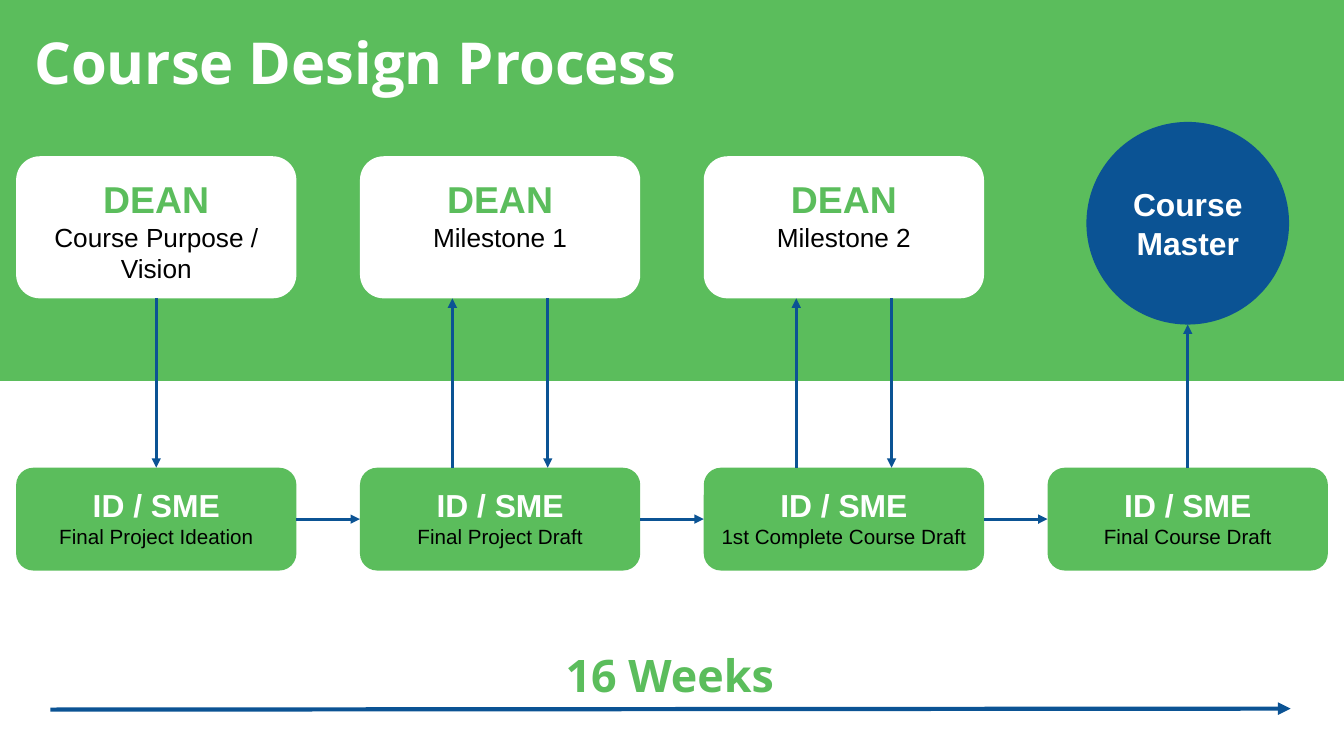
from lxml.etree import SubElement
from pptx import Presentation
from pptx.dml.color import RGBColor
from pptx.enum.shapes import MSO_CONNECTOR, MSO_SHAPE
from pptx.enum.text import MSO_ANCHOR, MSO_AUTO_SIZE, PP_ALIGN
from pptx.oxml.ns import qn
from pptx.util import Inches, Pt

WIDTH, HEIGHT = 13.33, 7.5
GREEN, BLUE, WHITE, BLACK = "5BBD5C", "0B5394", "FFFFFF", "000000"
LEFT, PITCH, BOX_WIDTH = 0.16, 3.41, 2.78
# Each row of the grid: top and height
ROWS = {"dean": (1.55, 1.41), "team": (4.64, 1.02)}
CENTER, UP_LANE, DOWN_LANE = 0.5, 0.33, 0.67


def color(value):
    return RGBColor.from_string(value)


def column_x(column, share=0):
    """Place in a column, with share as a part of the box width."""
    return LEFT + column * PITCH + share * BOX_WIDTH


def row_y(row, share=0):
    top, height = ROWS[row]
    return top + share * height


class ProcessSlide:
    def __init__(self, deck):
        self.page = deck.slides.add_slide(deck.slide_layouts[5])
        self.frame_format = {
            "word_wrap": True,
            "auto_size": MSO_AUTO_SIZE.NONE,
            "margin_left": Inches(0.12),
            "margin_right": Inches(0.12),
            "margin_top": Inches(0.13),
            "margin_bottom": Inches(0.13),
        }

    def fill_text(self, box, lines, align=PP_ALIGN.CENTER, anchor=MSO_ANCHOR.TOP):
        """Fill a box with lines of (text, size, color, bold, font)."""
        frame = box.text_frame
        for name, value in {**self.frame_format, "vertical_anchor": anchor}.items():
            setattr(frame, name, value)
        for index, (text, size, ink, bold, font) in enumerate(lines):
            para = frame.add_paragraph() if index else frame.paragraphs[0]
            para.alignment = align
            span = para.add_run()
            span.text = text
            for name, value in {"size": Pt(size), "bold": bold, "name": font}.items():
                setattr(span.font, name, value)
            span.font.color.rgb = color(ink)

    def title(self, text, place):
        box = self.page.shapes.title
        for name, value in zip(("left", "top", "width", "height"), place):
            setattr(box, name, Inches(value))
        self.fill_text(box, [(text, 41.3, WHITE, True, "Open Sans")], PP_ALIGN.LEFT)

    def label(self, text, place):
        box = self.page.shapes.add_textbox(*map(Inches, place))
        self.fill_text(box, [(text, 32, GREEN, True, "Open Sans")], PP_ALIGN.LEFT)

    def shape(self, kind, place, fill):
        box = self.page.shapes.add_shape(kind, *map(Inches, place))
        box.shadow.inherit = False
        box.fill.solid()
        box.fill.fore_color.rgb = color(fill)
        box.line.fill.background()
        return box

    def band(self, height):
        band = self.shape(MSO_SHAPE.RECTANGLE, (0, 0, WIDTH, height), GREEN)
        self.page.shapes.title.element.addprevious(band.element)

    def step(self, column, row, fill, lines):
        top, height = ROWS[row]
        place = (column_x(column), top, BOX_WIDTH, height)
        box = self.shape(MSO_SHAPE.ROUNDED_RECTANGLE, place, fill)
        box.adjustments[0] = 0.167
        self.fill_text(box, lines)

    def circle(self, center_x, top, size, lines):
        place = (center_x - size / 2, top, size, size)
        box = self.shape(MSO_SHAPE.OVAL, place, BLUE)
        self.fill_text(box, lines, anchor=MSO_ANCHOR.MIDDLE)

    def arrow(self, start, end, width=2.25, kind=MSO_CONNECTOR.STRAIGHT):
        line = self.page.shapes.add_connector(kind, *map(Inches, (*start, *end)))
        line.line.color.rgb = color(BLUE)
        line.line.width = Pt(width)
        properties = line.element.spPr
        SubElement(properties.find(qn("a:ln")), qn("a:tailEnd"), type="triangle")
        SubElement(properties, qn("a:effectLst"))


def main():
    deck = Presentation()
    deck.slide_width, deck.slide_height = Inches(WIDTH), Inches(HEIGHT)
    slide = ProcessSlide(deck)

    # Heading
    slide.band(3.78)
    slide.title("Course Design Process", (0.22, 0.13, 13.06, 1.69))

    # Dean reviews
    for column, task in enumerate(["Course Purpose / Vision", "Milestone 1", "Milestone 2"]):
        slide.step(column, "dean", WHITE, [
            ("DEAN", 26.7, GREEN, True, "Arial"),
            (task, 18.7, BLACK, False, "Arial"),
        ])

    # Design team work
    tasks = ["Final Project Ideation", "Final Project Draft",
             "1st Complete Course Draft", "Final Course Draft"]
    for column, task in enumerate(tasks):
        slide.step(column, "team", GREEN, [
            ("ID / SME", 22.7, WHITE, True, "Arial"),
            (task, 14.7, BLACK, False, "Arial"),
        ])

    # Finished course
    circle_top, circle_size = 1.21, 2.01
    finish_x = column_x(3, CENTER)
    slide.circle(finish_x, circle_top, circle_size,
                 [(word, 22.7, WHITE, True, "Arial") for word in ("Course", "Master")])

    # Arrows between the rows
    dean_bottom, team_top = row_y("dean", 1), row_y("team")
    for column, share in [(0, CENTER), (1, DOWN_LANE), (2, DOWN_LANE)]:
        x = column_x(column, share)
        slide.arrow((x, dean_bottom), (x, team_top))
    for column in (1, 2):
        x = column_x(column, UP_LANE)
        slide.arrow((x, team_top), (x, dean_bottom))
    slide.arrow((finish_x, team_top), (finish_x, circle_top + circle_size))

    # Arrows along the team row
    middle = row_y("team", CENTER)
    for column in range(3):
        kind = MSO_CONNECTOR.STRAIGHT if column else MSO_CONNECTOR.CURVE
        slide.arrow((column_x(column, 1), middle), (column_x(column + 1), middle), kind=kind)

    # Timeline
    slide.arrow((0.5, 7.04), (12.8, 7.03), width=3)
    slide.label("16 Weeks", (5.49, 6.3, 2.36, 0.62))

    deck.save("out.pptx")


if __name__ == "__main__":
    main()
